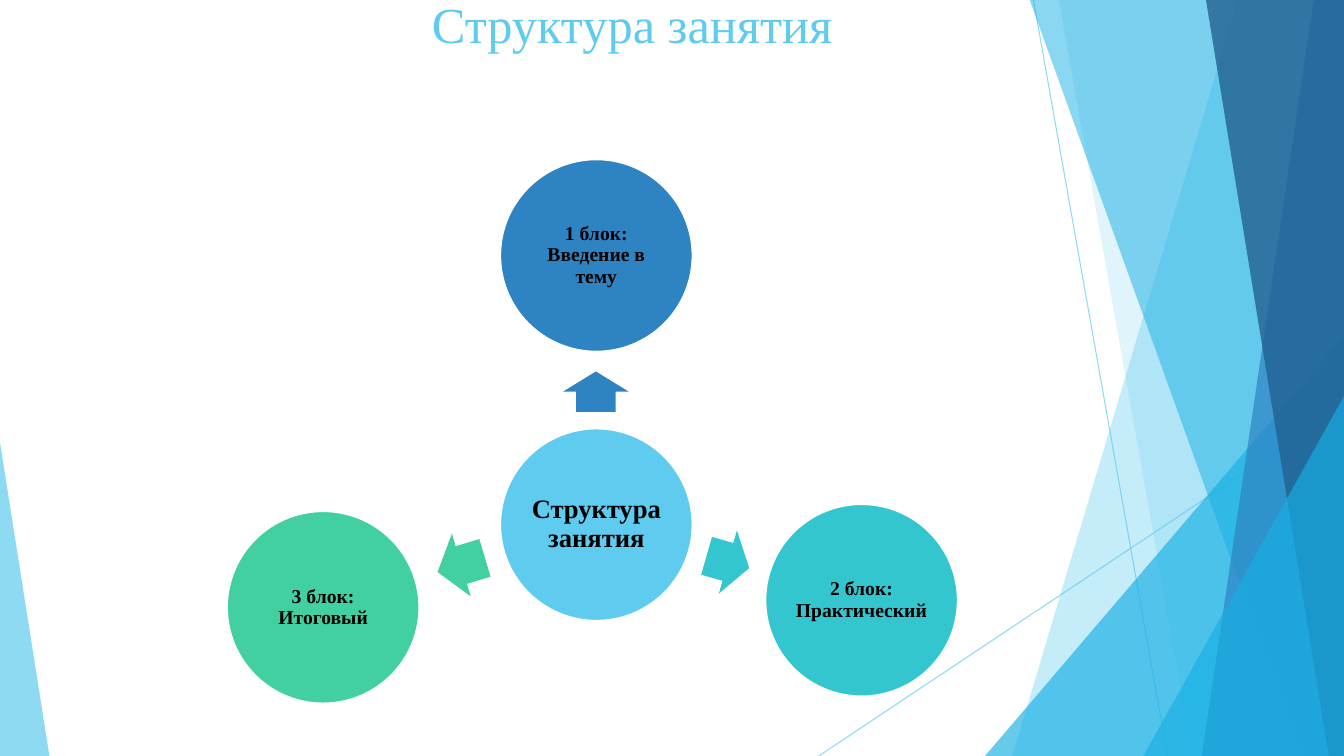
from typing import NamedTuple

from lxml.etree import SubElement
from pptx import Presentation
from pptx.dml.color import RGBColor
from pptx.enum.shapes import MSO_CONNECTOR, MSO_SHAPE
from pptx.enum.text import MSO_ANCHOR, MSO_AUTO_SIZE, PP_ALIGN
from pptx.oxml.ns import qn
from pptx.util import Pt

PX = 9144  # EMU per px, 100 px to the inch
WIDTH, HEIGHT = 1333, 750
CIRCLE = 191
ARROW_SPAN = 65
FONT = "Times New Roman"

SKY = RGBColor(0x5F, 0xCB, 0xEF)
AZURE = RGBColor(0x17, 0xB0, 0xE4)
BLUE = RGBColor(0x2E, 0x83, 0xC3)
NAVY = RGBColor(0x22, 0x62, 0x92)
TEAL = RGBColor(0x34, 0xC6, 0xCE)
GREEN = RGBColor(0x42, 0xD0, 0xA2)
WHITE = RGBColor(0xFF, 0xFF, 0xFF)
BLACK = RGBColor(0, 0, 0)


class Ray(NamedTuple):
    start: tuple[int, int]
    end: tuple[int, int]


class Band(NamedTuple):
    """Facet reaching the right edge, bounded by a slanted left side."""
    top_x: int
    bottom_x: int
    color: RGBColor
    opacity: int


class Corner(NamedTuple):
    """Right triangle standing on the bottom edge."""
    left: int
    top: int
    width: int
    apex: int
    color: RGBColor
    opacity: int


class Block(NamedTuple):
    text: str
    left: int
    top: int
    color: RGBColor
    size: int = 14


class Arrow(NamedTuple):
    left: int
    top: int
    length: int
    rotation: float
    color: RGBColor


RAYS = [Ray((1025, 0), (1158, 750)), Ray((1333, 403), (812, 750))]
FACETS = [
    Band(1228, 1004, SKY, 36),
    Band(1050, 1183, SKY, 20),
    Corner(977, 333, 356, 1, AZURE, 66),
    Band(1021, 1291, AZURE, 50),
    Band(1303, 1192, BLUE, 70),
    Band(1196, 1318, NAVY, 80),
    Corner(1134, 393, 199, 1, AZURE, 66),
    Corner(0, 439, 49, 0, SKY, 70),
]
BLOCKS = [
    Block("Структура занятия", 496, 425, SKY, 19),
    Block("1 блок: Введение в тему", 496, 158, BLUE),
    Block("2 блок: Практический", 759, 500, TEAL),
    Block("3 блок: Итоговый", 225, 507, GREEN),
]
ARROWS = [
    Arrow(571, 356, 40, 270, BLUE),
    Arrow(700, 525, 44, 16, TEAL),
    Arrow(433, 528, 49, 163.3, GREEN),
]


def set_opacity(element, percent: int) -> None:
    for color in element.spPr.iter(qn("a:srgbClr")):
        SubElement(color, qn("a:alpha"), val=str(percent * 1000))


def paint(shape, color: RGBColor) -> None:
    shape.shadow.inherit = False
    shape.fill.solid()
    shape.fill.fore_color.rgb = color
    shape.line.fill.background()


def add_preset(slide, kind, left: int, top: int, width: int, height: int, color: RGBColor):
    shape = slide.shapes.add_shape(kind, left * PX, top * PX, width * PX, height * PX)
    paint(shape, color)
    return shape


def write(frame, text: str, *, size: int, color: RGBColor, bold: bool = False,
          spacing: float = 1.0) -> None:
    frame.word_wrap = True
    paragraph = frame.paragraphs[0]
    paragraph.alignment = PP_ALIGN.CENTER
    paragraph.line_spacing = spacing
    run = paragraph.add_run()
    run.text = text
    run.font.name = FONT
    run.font.size = Pt(size)
    run.font.bold = bold
    run.font.color.rgb = color


def draw_ray(slide, ray: Ray) -> None:
    line = slide.shapes.add_connector(
        MSO_CONNECTOR.STRAIGHT, *(value * PX for value in ray.start + ray.end))
    line.line.color.rgb = SKY
    line.line.width = Pt(0.75)
    set_opacity(line.element, 70)
    SubElement(line.element.spPr, qn("a:effectLst"))


def draw_facet(slide, facet: Band | Corner) -> None:
    if isinstance(facet, Band):
        builder = slide.shapes.build_freeform(facet.top_x, -1, scale=PX)
        builder.add_line_segments(
            [(WIDTH, -1), (WIDTH, HEIGHT), (facet.bottom_x, HEIGHT)], close=True)
        shape = builder.convert_to_shape()
        paint(shape, facet.color)
    else:
        shape = add_preset(slide, MSO_SHAPE.ISOSCELES_TRIANGLE, facet.left, facet.top,
                           facet.width, HEIGHT - facet.top, facet.color)
        shape.adjustments[0] = facet.apex
    set_opacity(shape.element, facet.opacity)


def draw_block(slide, block: Block) -> None:
    circle = add_preset(slide, MSO_SHAPE.OVAL, block.left, block.top,
                        CIRCLE, CIRCLE, block.color)
    circle.line.color.rgb = WHITE
    circle.line.width = Pt(1.5)
    frame = circle.text_frame
    frame.margin_left = frame.margin_right = frame.margin_top = frame.margin_bottom = PX
    frame.vertical_anchor = MSO_ANCHOR.MIDDLE
    write(frame, block.text, size=block.size, color=BLACK, bold=True, spacing=0.9)


def draw_arrow(slide, arrow: Arrow) -> None:
    shape = add_preset(slide, MSO_SHAPE.RIGHT_ARROW, arrow.left, arrow.top,
                       arrow.length, ARROW_SPAN, arrow.color)
    shape.adjustments[0] = 0.6
    shape.adjustments[1] = 0.5
    shape.rotation = arrow.rotation


def main() -> None:
    deck = Presentation()
    deck.slide_width, deck.slide_height = WIDTH * PX, HEIGHT * PX
    slide = deck.slides.add_slide(deck.slide_layouts[6])

    # Faceted backdrop
    for ray in RAYS:
        draw_ray(slide, ray)
    for facet in FACETS:
        draw_facet(slide, facet)

    # Radial diagram of the lesson
    for block in BLOCKS:
        draw_block(slide, block)
    for arrow in ARROWS:
        draw_arrow(slide, arrow)

    # Title
    title = slide.shapes.add_textbox(293 * PX, -12 * PX, 668 * PX, 71 * PX)
    title.text_frame.auto_size = MSO_AUTO_SIZE.SHAPE_TO_FIT_TEXT
    write(title.text_frame, "Структура занятия", size=36, color=SKY)

    deck.save("out.pptx")


if __name__ == "__main__":
    main()
